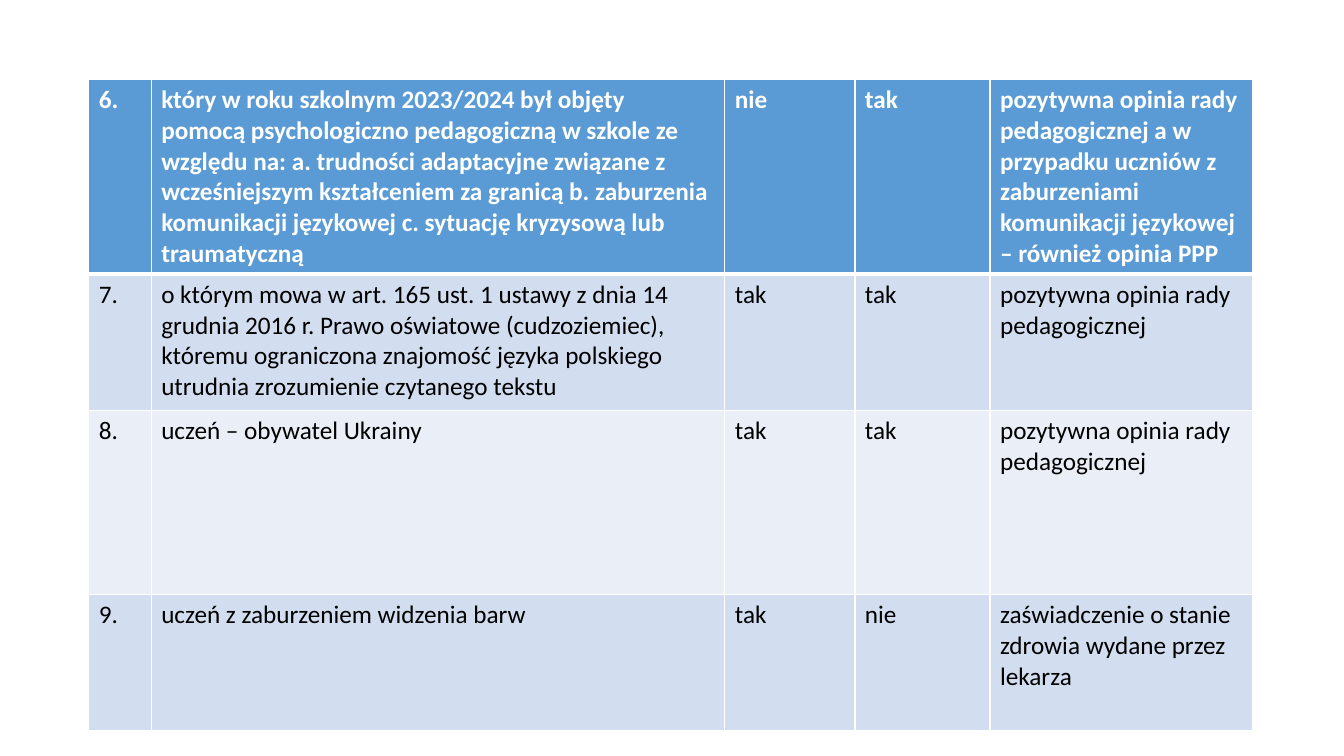
from dataclasses import dataclass

from lxml import etree
from pptx import Presentation
from pptx.dml.color import RGBColor
from pptx.oxml.ns import qn
from pptx.util import Inches, Pt

# Content: number, pupil group, two yes/no columns, required document
ROWS = [
    ("6.",
     "który w roku szkolnym 2023/2024 był objęty pomocą psychologiczno pedagogiczną "
     "w szkole ze względu na: a. trudności adaptacyjne związane z wcześniejszym "
     "kształceniem za granicą b. zaburzenia komunikacji językowej c. sytuację "
     "kryzysową lub traumatyczną",
     "nie", "tak",
     "pozytywna opinia rady pedagogicznej a w przypadku uczniów z zaburzeniami "
     "komunikacji językowej – również opinia PPP"),
    ("7.",
     "o którym mowa w art. 165 ust. 1 ustawy z dnia 14 grudnia 2016 r. Prawo oświatowe "
     "(cudzoziemiec), któremu ograniczona znajomość języka polskiego utrudnia "
     "zrozumienie czytanego tekstu",
     "tak", "tak", "pozytywna opinia rady pedagogicznej"),
    ("8.", "uczeń – obywatel Ukrainy",
     "tak", "tak", "pozytywna opinia rady pedagogicznej"),
    ("9.", "uczeń z zaburzeniem widzenia barw",
     "tak", "nie", "zaświadczenie o stanie zdrowia wydane przez lekarza"),
]
COL_WIDTHS = [0.62, 5.69, 1.29, 1.34, 2.6]
ROW_HEIGHTS = [1.83, 1.35, 1.83, 1.35]
LEFT, TOP = 0.88, 0.79


@dataclass(frozen=True)
class Theme:
    font: str = "Calibri"
    size: int = 18
    header: str = "5B9BD5"
    bands: tuple = ("D2DEEF", "EAEFF7")
    header_text: str = "FFFFFF"
    body_text: str = "000000"
    border: str = "FFFFFF"
    thin: int = 1
    thick: int = 3


THEME = Theme()


def set_border(cell, side, width):
    tc_pr = cell._tc.get_or_add_tcPr()
    ln = etree.SubElement(tc_pr, qn(f"a:ln{side}"), w=str(Pt(width)))
    fill = etree.SubElement(ln, qn("a:solidFill"))
    etree.SubElement(fill, qn("a:srgbClr"), val=THEME.border)


def format_cell(cell, text, row):
    is_header = row == 0
    # Borders, with a thick rule under the header
    widths = {"L": THEME.thin, "R": THEME.thin,
              "T": THEME.thick if row == 1 else THEME.thin,
              "B": THEME.thick if is_header else THEME.thin}
    for side, width in widths.items():
        set_border(cell, side, width)

    # Fill
    fill = THEME.header if is_header else THEME.bands[(row - 1) % 2]
    cell.fill.solid()
    cell.fill.fore_color.rgb = RGBColor.from_string(fill)

    # Text
    cell.text_frame.text = text
    font = cell.text_frame.paragraphs[0].runs[0].font
    font.name = THEME.font
    font.size = Pt(THEME.size)
    font.bold = is_header
    font.color.rgb = RGBColor.from_string(
        THEME.header_text if is_header else THEME.body_text)


def main():
    prs = Presentation()
    prs.slide_width, prs.slide_height = Inches(13.33), Inches(7.5)
    s = prs.slides.add_slide(prs.slide_layouts[6])

    # Table grid
    table = s.shapes.add_table(
        len(ROWS), len(COL_WIDTHS), Inches(LEFT), Inches(TOP),
        Inches(sum(COL_WIDTHS)), Inches(sum(ROW_HEIGHTS))).table
    for column, width in zip(table.columns, COL_WIDTHS):
        column.width = Inches(width)
    for row, height in zip(table.rows, ROW_HEIGHTS):
        row.height = Inches(height)

    # Table cells
    for i, texts in enumerate(ROWS):
        for j, text in enumerate(texts):
            format_cell(table.cell(i, j), text, i)

    prs.save("out.pptx")


if __name__ == "__main__":
    main()
